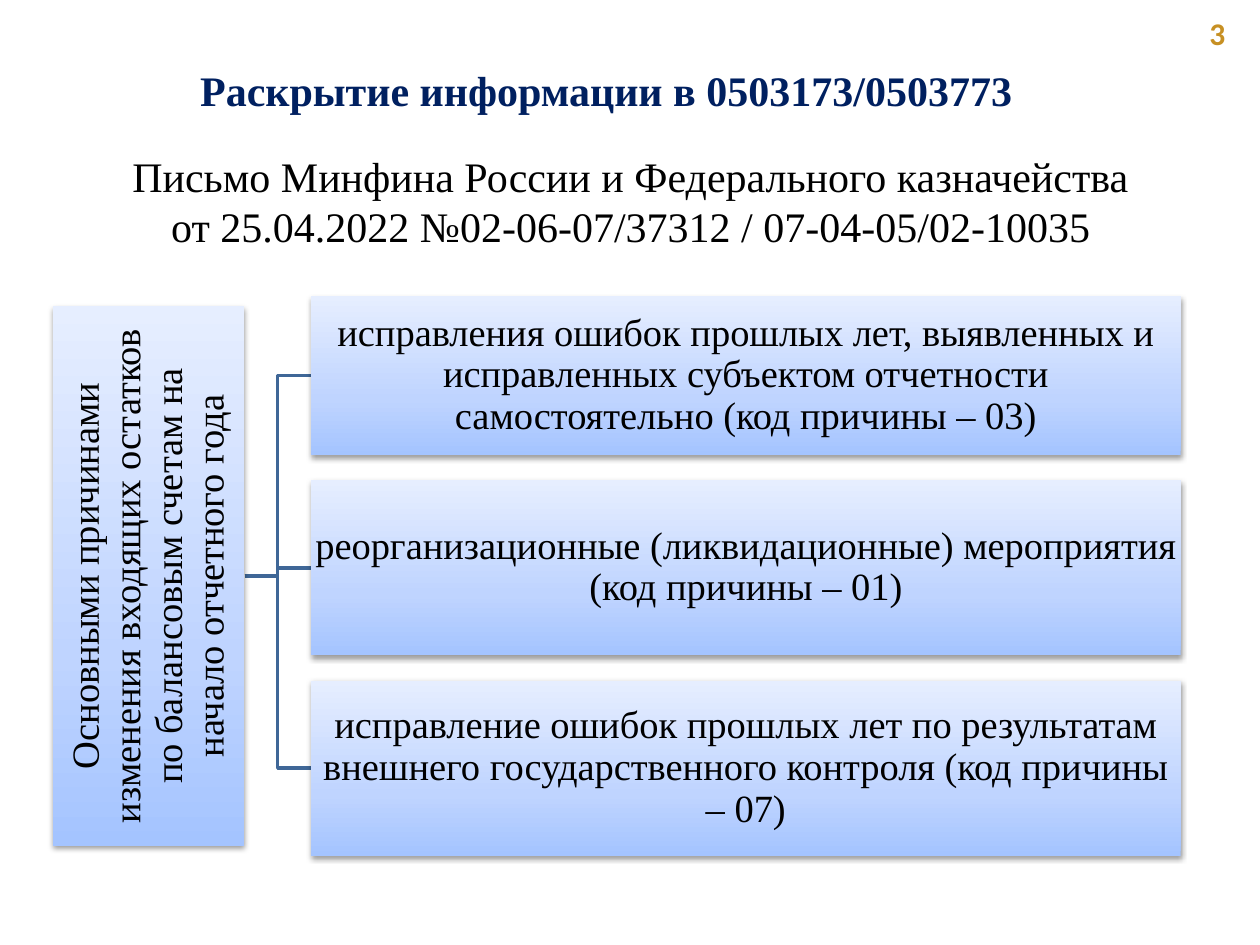
from pptx import Presentation
from pptx.dml.color import RGBColor
from pptx.enum.shapes import MSO_SHAPE
from pptx.enum.text import MSO_ANCHOR, MSO_AUTO_SIZE, PP_ALIGN
from pptx.oxml import parse_xml
from pptx.oxml.ns import nsdecls
from pptx.util import Cm, Pt

RECTANGLE = MSO_SHAPE.RECTANGLE
TOP, MIDDLE = MSO_ANCHOR.TOP, MSO_ANCHOR.MIDDLE
LEFT, CENTER = PP_ALIGN.LEFT, PP_ALIGN.CENTER
NO_AUTOFIT = MSO_AUTO_SIZE.NONE

SERIF = "Times New Roman"
BLACK, NAVY, GOLD, STEEL = "000000", "002060", "C79023", "3F6797"
GRADIENT = [(0, "A4C4FF"), (35, "BFD4FF"), (100, "E6EEFF")]

CAUSE = "Основными причинами изменения входящих остатков по балансовым счетам на начало отчетного года"
CAUSE_CENTER_X, CAUSE_CENTER_Y = 3.0, 11.61
CAUSE_LENGTH, CAUSE_THICKNESS = 10.87, 3.86

REASONS = [
    ("исправления ошибок прошлых лет, выявленных и исправленных субъектом отчетности "
     "самостоятельно (код причины – 03)", 3.2),
    ("реорганизационные (ликвидационные) мероприятия (код причины – 01)", 3.53),
    ("исправление ошибок прошлых лет по результатам внешнего государственного контроля "
     "(код причины – 07)", 3.53),
]
REASON_LEFT, REASON_TOP, REASON_WIDTH, REASON_GAP = 6.27, 5.97, 17.53, 0.51


def color(value):
    return RGBColor.from_string(value)


def place(shape, left, top, width, height):
    shape.left, shape.top = Cm(left), Cm(top)
    shape.width, shape.height = Cm(width), Cm(height)


def write(shape, text, size, shade, font=SERIF, bold=False, align=CENTER, anchor=TOP, spacing=1.0):
    frame = shape.text_frame
    frame.text = text
    frame.word_wrap = True
    frame.auto_size = NO_AUTOFIT
    frame.vertical_anchor = anchor
    for para in frame.paragraphs:
        para.alignment = align
        para.line_spacing = spacing
        para.space_before = Pt(0)
        for span in para.runs:
            span.font.name = font
            span.font.size = Pt(size)
            span.font.bold = bold
            span.font.color.rgb = color(shade)


def remove_bullet(para):
    properties = para._p.get_or_add_pPr()
    properties.set("marL", "0")
    properties.set("indent", "0")
    properties.append(parse_xml(f"<a:buNone {nsdecls('a')}/>"))


def style_panel(box):
    stops = "".join(
        f'<a:gs pos="{position * 1000}"><a:srgbClr val="{shade}"/></a:gs>'
        for position, shade in GRADIENT
    )
    fill = parse_xml(
        f'<a:gradFill {nsdecls("a")} rotWithShape="0"><a:gsLst>{stops}</a:gsLst>'
        '<a:lin ang="16200000" scaled="0"/></a:gradFill>'
    )
    shadow = parse_xml(
        f'<a:effectLst {nsdecls("a")}><a:outerShdw blurRad="40000" dist="20000" dir="5400000" '
        'rotWithShape="0"><a:srgbClr val="000000"><a:alpha val="38000"/></a:srgbClr>'
        '</a:outerShdw></a:effectLst>'
    )
    box.line.fill.background()
    properties = box._element.spPr
    properties.insert(2, fill)
    properties.append(shadow)


def add_panel(page, text, left, top, width, height, rotation=0):
    box = page.shapes.add_shape(RECTANGLE, Cm(left), Cm(top), Cm(width), Cm(height))
    box.rotation = rotation
    style_panel(box)
    write(box, text, 22, BLACK, anchor=MIDDLE, spacing=0.9)
    frame = box.text_frame
    frame.margin_left = frame.margin_right = Cm(0.05)
    frame.margin_top = frame.margin_bottom = Cm(0.05)


def add_branch(page, start_x, start_y, end_x, end_y):
    bend_x = (start_x + end_x) / 2
    builder = page.shapes.build_freeform(Cm(start_x), Cm(start_y))
    corners = [(bend_x, start_y), (bend_x, end_y), (end_x, end_y)]
    builder.add_line_segments([(Cm(x), Cm(y)) for x, y in corners], close=False)
    branch = builder.convert_to_shape()
    branch.fill.background()
    branch.line.color.rgb = color(STEEL)
    branch.line.width = Pt(2)
    branch.shadow.inherit = False


def add_headings(page):
    number = page.shapes.add_textbox(Cm(24.13), Cm(0.15), Cm(1.27), Cm(1.02))
    write(number, "3", 18, GOLD, font="Calibri", bold=True, align=LEFT)

    title = page.shapes.title
    place(title, 1.3, 1.17, 21.84, 1.27)
    write(title, "Раскрытие информации в 0503173/0503773", 24, NAVY, bold=True, anchor=MIDDLE)

    letter = page.placeholders[1]
    place(letter, 0.66, 2.9, 24.1, 2.62)
    write(letter, "Письмо Минфина России и Федерального казначейства\v"
                  "от 25.04.2022 №02-06-07/37312 / 07-04-05/02-10035", 24, BLACK)
    remove_bullet(letter.text_frame.paragraphs[0])


def add_hierarchy(page):
    tops = [REASON_TOP]
    for _, height in REASONS[:-1]:
        tops.append(tops[-1] + height + REASON_GAP)

    cause_right = CAUSE_CENTER_X + CAUSE_THICKNESS / 2
    for top, (_, height) in zip(tops, REASONS):
        add_branch(page, cause_right, CAUSE_CENTER_Y, REASON_LEFT, top + height / 2)

    add_panel(page, CAUSE, CAUSE_CENTER_X - CAUSE_LENGTH / 2, CAUSE_CENTER_Y - CAUSE_THICKNESS / 2,
              CAUSE_LENGTH, CAUSE_THICKNESS, rotation=270)
    for top, (text, height) in zip(tops, REASONS):
        add_panel(page, text, REASON_LEFT, top, REASON_WIDTH, height)


def main():
    deck = Presentation()
    deck.slide_width, deck.slide_height = Cm(25.4), Cm(19.05)
    page = deck.slides.add_slide(deck.slide_layouts[1])
    add_headings(page)
    add_hierarchy(page)
    deck.save("out.pptx")


if __name__ == "__main__":
    main()
